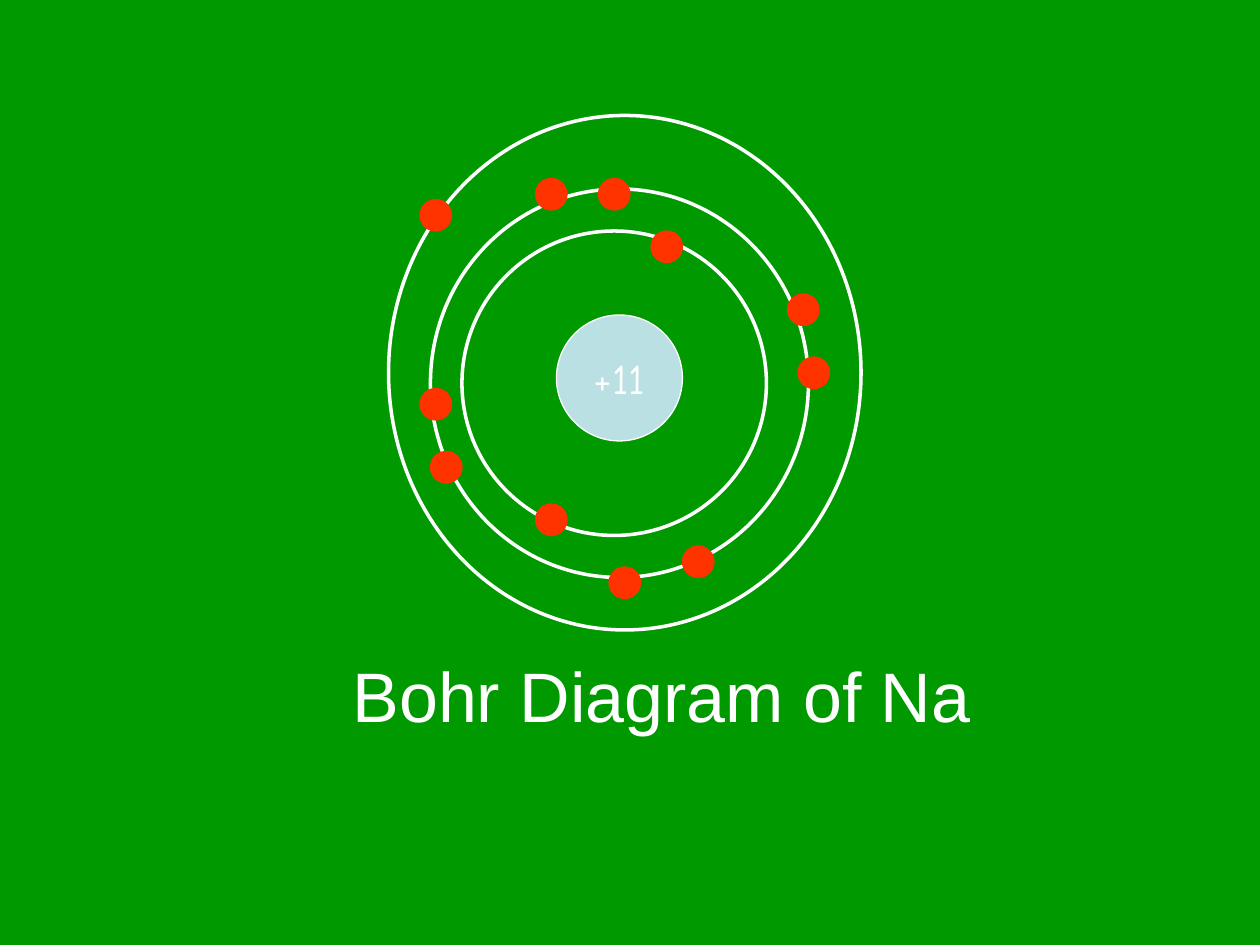
from collections import namedtuple

from pptx import Presentation
from pptx.dml.color import RGBColor
from pptx.enum.shapes import MSO_SHAPE as Shape
from pptx.enum.text import MSO_ANCHOR as Anchor, PP_ALIGN as Align
from pptx.util import Inches, Pt

Box = namedtuple("Box", "left top width height")

COLORS = {
    "board": "009900",
    "chalk": "FFFFFF",
    "nucleus": "BBE0E3",
    "electron": "FF3300",
}
UNIT = Inches(1) / 12
ELECTRON_SIZE = 3
ATOM_BOX = Box(37, 11, 45, 49)
TITLE_BOX = Box(9, 56, 108, 20.25)
NUCLEUS = Box(16, 19, 12, 12)
SHELLS = [
    (Box(7, 11, 29, 29), [(25, 11), (14, 37)]),
    (Box(4, 7, 36, 37), [(3, 26), (4, 32), (14, 6), (20, 6),
                         (38, 17), (39, 23), (28, 41), (21, 43)]),
    (Box(0, 0, 45, 49), [(3, 8)]),
]


def color(name):
    return RGBColor.from_string(COLORS[name])


def set_all(target, values):
    for name, value in values.items():
        setattr(target, name, value)


def to_lengths(box):
    return [round(cells * UNIT) for cells in box]


def write(shape, text, font, size, wrap):
    frame = shape.text_frame
    set_all(frame, {"word_wrap": wrap, "vertical_anchor": Anchor.MIDDLE})
    para = frame.paragraphs[0]
    para.alignment = Align.CENTER
    span = para.add_run()
    span.text = text
    set_all(span.font, {"name": font, "size": Pt(size), "bold": False})
    span.font.color.rgb = color("chalk")


def add_circle(page, parent, box, line, width, fill=None):
    placed = Box(parent.left + box.left, parent.top + box.top, box.width, box.height)
    circle = page.shapes.add_shape(Shape.OVAL, *to_lengths(placed))
    circle.shadow.inherit = False
    if fill:
        circle.fill.solid()
        circle.fill.fore_color.rgb = color(fill)
    else:
        circle.fill.background()
    circle.line.color.rgb = color(line)
    circle.line.width = Pt(width)
    return circle


def add_title(page, box):
    title = page.shapes.title
    set_all(title, dict(zip(Box._fields, to_lengths(box))))
    write(title, "Bohr Diagram of Na", "Arial", 40, True)


def add_atom(page, box):
    nucleus = add_circle(page, box, NUCLEUS, "chalk", 0.75, "nucleus")
    write(nucleus, "+11", "Comic Neue", 24, False)
    for shell, electrons in SHELLS:
        add_circle(page, box, shell, "chalk", 2)
    for shell, electrons in SHELLS:
        for left, top in electrons:
            electron = Box(left, top, ELECTRON_SIZE, ELECTRON_SIZE)
            add_circle(page, box, electron, "electron", 0.75, "electron")


def main():
    deck = Presentation()
    set_all(deck, {"slide_width": Inches(10), "slide_height": Inches(7.5)})
    page = deck.slides.add_slide(deck.slide_layouts.get_by_name("Title Only"))
    page.background.fill.solid()
    page.background.fill.fore_color.rgb = color("board")
    add_title(page, TITLE_BOX)
    add_atom(page, ATOM_BOX)
    deck.save("out.pptx")


if __name__ == "__main__":
    main()
